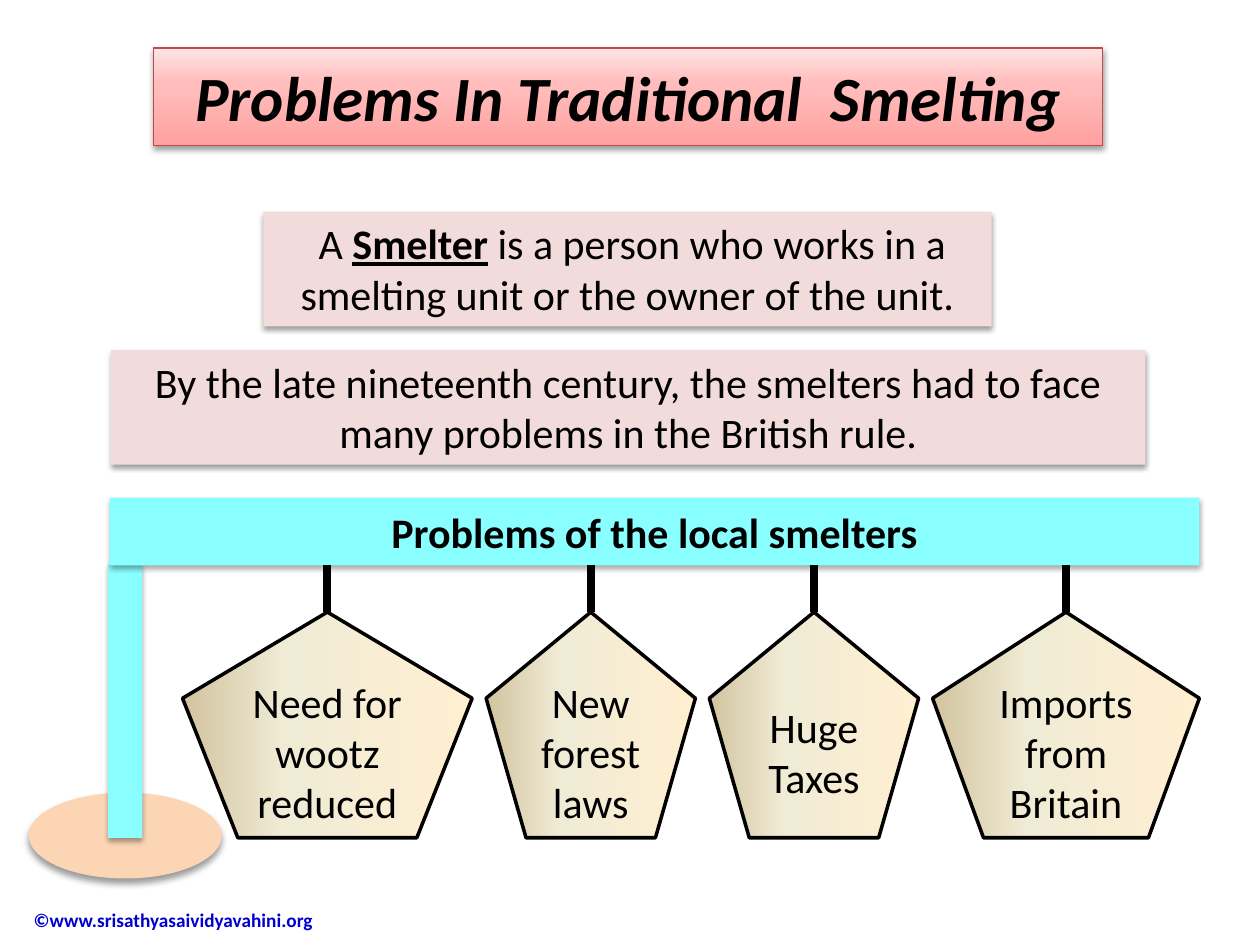
from dataclasses import dataclass

from lxml.etree import SubElement
from pptx import Presentation
from pptx.dml.color import RGBColor
from pptx.enum.shapes import MSO_CONNECTOR as CONN, MSO_SHAPE as SHAPE
from pptx.enum.text import MSO_ANCHOR as ANCHOR, MSO_AUTO_SIZE as FIT, PP_ALIGN as ALIGN
from pptx.oxml.ns import qn
from pptx.util import Cm, Pt


@dataclass(frozen=True)
class Theme:
    font: str = "Calibri"
    ink: str = "000000"
    link: str = "0000CC"
    note: str = "F2DCDB"
    post: str = "89FFFF"
    base: str = "FCD5B5"
    title_edge: str = "BE4B48"
    title_grad: tuple = ((0, "FFE5E5"), (35, "FFBEBD"), (100, "FFA2A1"))
    sign_grad: tuple = ((0, "FFEFD1"), (65, "F0EBD5"), (100, "D1C39F"))
    title_size: int = 36
    body_size: int = 24
    small_size: int = 11


T = Theme()
TITLE = "Problems In Traditional  Smelting"
TITLE_BOX = (3.1, 0.97, 19.13, 1.96)
NOTES = [
    ((2.24, 7.06, 20.85, 2.31),
     [("By the late nineteenth century, the smelters had to face many problems "
       "in the British rule.", {})]),
    ((5.31, 4.27, 14.68, 2.31),
     [(" A ", {}), ("Smelter", {"bold": True, "underline": True}),
      (" is a person who works in a smelting unit or the owner of the unit.", {})]),
]
BEAM = "Problems of the local smelters"
BEAM_BOX = (2.21, 10.03, 21.97, 1.37)
POST_BOX = (2.18, 11.38, 0.69, 5.51)
BASE_BOX = (0.58, 15.98, 3.89, 1.73)
SIGNS = [("Need for wootz reduced", 5.84), ("New forest laws", 4.22),
         ("Huge Taxes", 4.22), ("Imports from Britain", 5.38)]
SIGN_LEFT, SIGN_TOP, SIGN_HEIGHT, SIGN_GAP = 3.68, 12.34, 4.55, 0.28
CREDIT = "©www.srisathyasaividyavahini.org"
CREDIT_BOX = (-0.84, 18.03, 7.67, 1.04)
CREDIT_INDENT = 1.52


def rgb(color):
    """Turn a hex string into a colour."""
    return RGBColor.from_string(color)


def add_text(p, text, size=T.body_size, color=T.ink, align=ALIGN.CENTER, **fmt):
    """Append one formatted run to a paragraph."""
    p.alignment = align
    r = p.add_run()
    r.text = text
    r.font.name, r.font.size = T.font, Pt(size)
    r.font.color.rgb = rgb(color)
    for name, value in fmt.items():
        setattr(r.font, name, value)


def set_gradient(sp, stops, angle):
    """Fill a shape with a linear gradient."""
    sp.fill.gradient()
    sp.fill.gradient_angle = angle
    gs_list = next(sp._element.spPr.iter(qn("a:gsLst")))
    for gs in list(gs_list):
        gs_list.remove(gs)
    for pos, color in stops:
        gs = SubElement(gs_list, qn("a:gs"), pos=str(pos * 1000))
        SubElement(gs, qn("a:srgbClr"), val=color)


def set_shadow(sp, alpha, blur, dist):
    """Drop a soft black shadow straight down."""
    effects = sp._element.spPr.find(qn("a:effectLst"))
    shadow = SubElement(effects, qn("a:outerShdw"), blurRad=str(Pt(blur)),
                        dist=str(Pt(dist)), dir="5400000", rotWithShape="0")
    color = SubElement(shadow, qn("a:srgbClr"), val=T.ink)
    SubElement(color, qn("a:alpha"), val=str(alpha * 1000))


def add_block(s, kind, box, fill=None, grad=None, line=None, shadow=None):
    """Add a preset shape with its fill, outline and shadow."""
    sp = s.shapes.add_shape(kind, *map(Cm, box))
    sp.shadow.inherit = False
    if grad:
        set_gradient(sp, *grad)
    else:
        sp.fill.solid()
        sp.fill.fore_color.rgb = rgb(fill)
    if line:
        sp.line.color.rgb, sp.line.width = rgb(line[0]), Pt(line[1])
    else:
        sp.line.fill.background()
    if shadow:
        set_shadow(sp, *shadow)
    sp.text_frame.word_wrap = True
    sp.text_frame.vertical_anchor = ANCHOR.MIDDLE
    return sp


def add_hanger(s, x, top, bottom):
    """Add the vertical bar that holds a sign."""
    bar = s.shapes.add_connector(CONN.STRAIGHT, Cm(x), Cm(top), Cm(x), Cm(bottom))
    bar.line.color.rgb, bar.line.width = rgb(T.ink), Pt(4.5)
    SubElement(bar._element.spPr, qn("a:effectLst"))


def add_credit(s):
    """Add the copyright line."""
    tf = s.shapes.add_textbox(*map(Cm, CREDIT_BOX)).text_frame
    tf.word_wrap, tf.vertical_anchor = True, ANCHOR.MIDDLE
    tf.margin_left = Cm(CREDIT_INDENT)
    add_text(tf.paragraphs[0], CREDIT, size=T.small_size, color=T.link,
             align=ALIGN.LEFT, bold=True)


def add_signpost(s):
    """Add the post, its beam and the hanging signs."""
    add_block(s, SHAPE.OVAL, BASE_BOX, T.base, shadow=(40, 4, 3))
    add_block(s, SHAPE.RECTANGLE, POST_BOX, T.post, shadow=(35, 3.1, 1.8))
    beam = add_block(s, SHAPE.RECTANGLE, BEAM_BOX, T.post, shadow=(35, 3.1, 1.8))
    add_text(beam.text_frame.paragraphs[0], BEAM, bold=True)
    x = SIGN_LEFT
    for text, width in SIGNS:
        sign = add_block(s, SHAPE.REGULAR_PENTAGON, (x, SIGN_TOP, width, SIGN_HEIGHT),
                         grad=(T.sign_grad, 180), line=(T.ink, 2))
        add_text(sign.text_frame.paragraphs[0], text)
        add_hanger(s, x + width / 2, BEAM_BOX[1] + BEAM_BOX[3], SIGN_TOP)
        x += width + SIGN_GAP


def main():
    """Build the slide and save it."""
    prs = Presentation()
    prs.slide_width, prs.slide_height = Cm(25.4), Cm(19.05)
    s = prs.slides.add_slide(prs.slide_layouts[6])
    add_credit(s)
    title = add_block(s, SHAPE.RECTANGLE, TITLE_BOX, grad=(T.title_grad, 270),
                      line=(T.title_edge, 0.75), shadow=(38, 3.1, 1.6))
    add_text(title.text_frame.paragraphs[0], TITLE, size=T.title_size,
             bold=True, italic=True)
    for box, runs in NOTES:
        tf = add_block(s, SHAPE.RECTANGLE, box, T.note, shadow=(38, 3.1, 1.6)).text_frame
        tf.vertical_anchor, tf.auto_size = ANCHOR.TOP, FIT.SHAPE_TO_FIT_TEXT
        for text, fmt in runs:
            add_text(tf.paragraphs[0], text, **fmt)
    add_signpost(s)
    prs.save("out.pptx")


if __name__ == "__main__":
    main()
